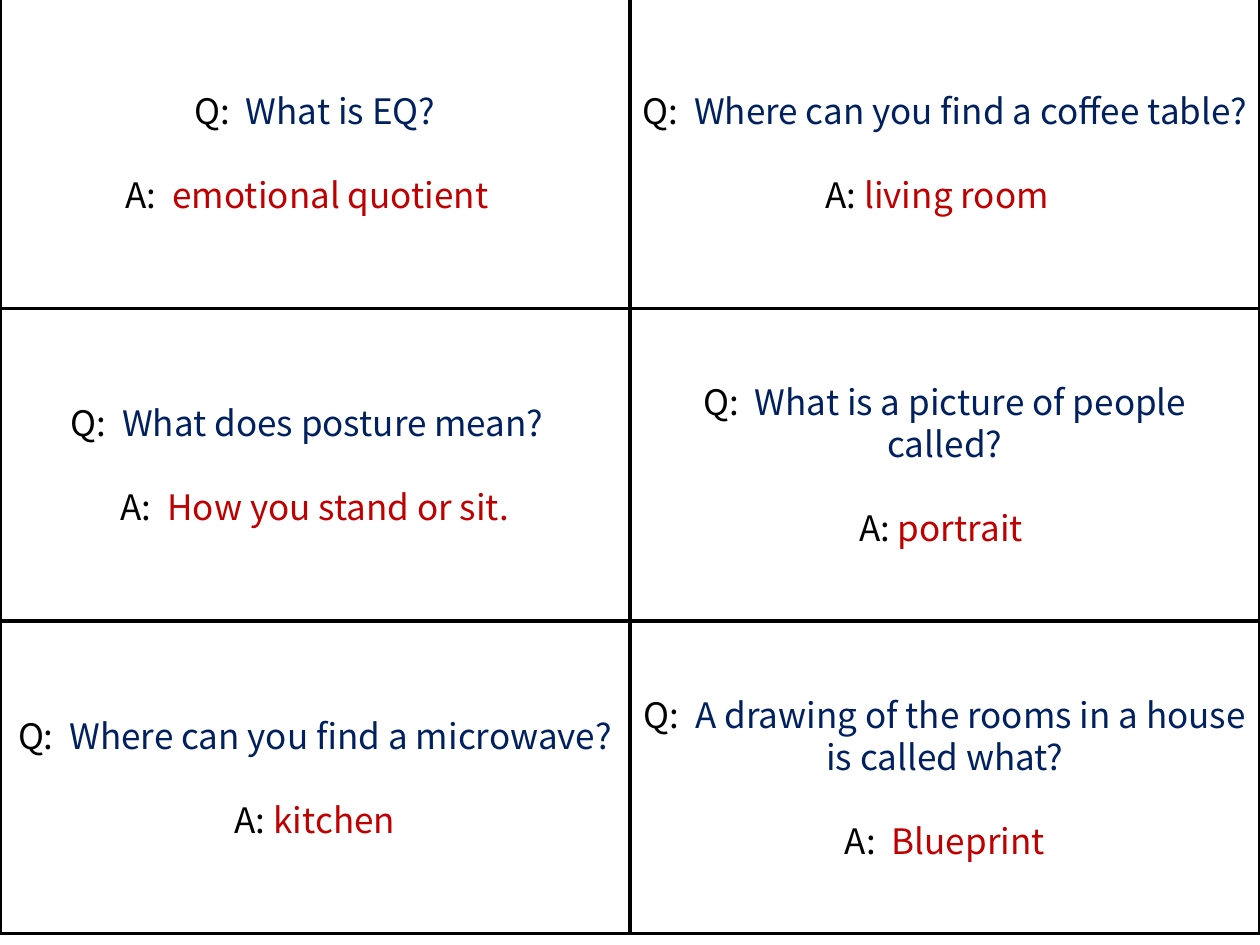
"""Build a slide of six question and answer cards in a two by three grid."""
from dataclasses import dataclass

from pptx import Presentation
from pptx.dml.color import RGBColor as Rgb
from pptx.enum.shapes import MSO_SHAPE as Kind
from pptx.enum.text import MSO_ANCHOR as Anchor, MSO_AUTO_SIZE as Fit, PP_ALIGN as Align
from pptx.shapes.autoshape import Shape
from pptx.slide import Slide
from pptx.util import Inches, Pt

FONT = "Noto Sans CJK KR"
HUES = {"label": "000000", "ask": "002060", "reply": "C00000", "card": "FFFFFF", "edge": "000000"}
ROWS, WIDE, HIGH, TOP = 3, 5, 2.48, -0.03


@dataclass
class Card:
    """Hold one question and its answer, with their labels."""
    ask: str
    reply: str
    mark: str = "A: "


CARDS = [
    Card("What is EQ?", "emotional quotient  ", "A:  "),
    Card("What does posture mean?  ", "How you stand or sit.", "A:  "),
    Card("Where can you find a microwave?", "kitchen"),
    Card("Where can you find a coffee table?", "living room  "),
    Card("What is a picture of people called?", "portrait "),
    Card("A drawing of the rooms in a house is called what?", "Blueprint", "A:  "),
]


def hue(name: str) -> Rgb:
    """Return the named colour."""
    return Rgb.from_string(HUES[name])


def write(para, text: str, *, tint: str, size: float = 20) -> None:
    """Add a formatted run to a paragraph."""
    run = para.add_run()
    run.text = text
    run.font.name = FONT
    run.font.size = Pt(size)
    run.font.color.rgb = hue(tint)


def fill(box: Shape, card: Card) -> None:
    """Style a card and write its two paragraphs."""
    box.fill.solid()
    box.fill.fore_color.rgb = hue("card")
    box.line.color.rgb = hue("edge")
    box.line.width = Pt(2)
    box.shadow.inherit = False
    frame = box.text_frame
    frame.word_wrap = True
    frame.auto_size = Fit.NONE
    frame.vertical_anchor = Anchor.MIDDLE
    ask, reply = frame.paragraphs[0], frame.add_paragraph()
    for para in (ask, reply):
        para.alignment = Align.CENTER
        para.line_spacing = Pt(24)
    reply.space_before = Pt(24)
    write(ask, "Q:  ", tint="label")
    write(ask, card.ask, tint="ask")
    write(reply, card.mark, tint="label")
    write(reply, card.reply, tint="reply")


def place(slide: Slide, spot: int, card: Card) -> None:
    """Put a card in its grid cell, the first one in the title."""
    col, row = divmod(spot, ROWS)
    area = [Inches(n) for n in (col * WIDE, TOP + row * HIGH, WIDE, HIGH)]
    if spot == 0:
        box = slide.shapes.title
        box.left, box.top, box.width, box.height = area
    else:
        box = slide.shapes.add_shape(Kind.RECTANGLE, *area)
    fill(box, card)


def main() -> None:
    """Build and save the deck."""
    deck = Presentation()
    deck.slide_width, deck.slide_height = Inches(10), Inches(7.5)
    slide = deck.slides.add_slide(deck.slide_layouts[5])
    for spot, card in enumerate(CARDS):
        place(slide, spot, card)
    deck.save("out.pptx")


if __name__ == "__main__":
    main()
